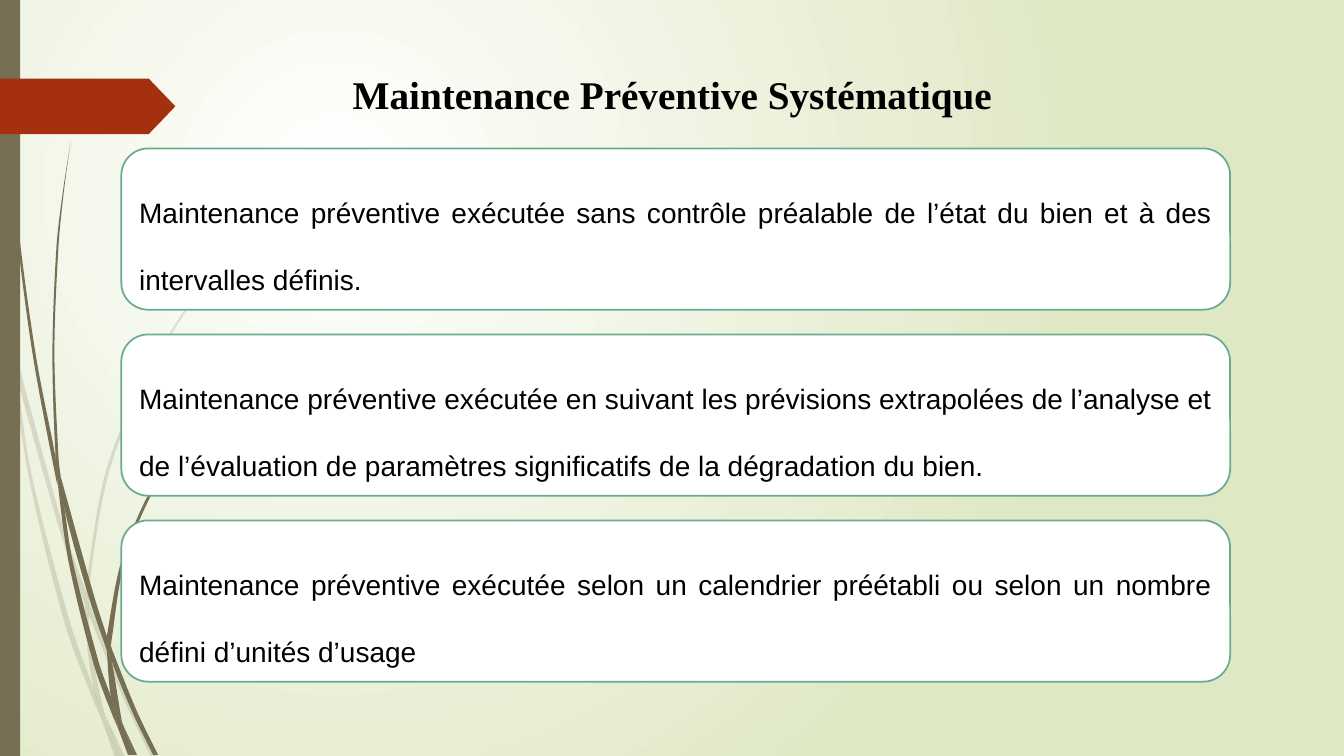
from dataclasses import dataclass

from lxml import etree
from pptx import Presentation
from pptx import util as u
from pptx.dml.color import RGBColor
from pptx.enum import shapes, text
from pptx.oxml import ns
from pptx.shapes.autoshape import Shape
from pptx.slide import Slide
from pptx.text.text import TextFrame

Point = tuple[float, float]

SLIDE_WIDTH = u.Inches(13.333)
SLIDE_HEIGHT = u.Inches(7.5)
GRID_ROWS = 75
CELL = SLIDE_HEIGHT / GRID_ROWS


@dataclass(frozen=True)
class Theme:
    glow: str = "FFFFFF"
    edge: str = "DFE8C4"
    olive: str = "766F54"
    rust: str = "A53010"
    card: str = "FFFFFF"
    card_line: str = "6AAC91"
    ink: str = "000000"
    title_font: str = "Times New Roman"
    body_font: str = "Arial"
    title_size: int = 28
    body_size: int = 20
    line_width: float = 1.25
    faint_percent: int = 20


@dataclass(frozen=True)
class Area:
    column: float
    row: float
    columns: float
    rows: float

    def lengths(self) -> tuple[int, int, int, int]:
        return (cells(self.column), cells(self.row),
                cells(self.columns), cells(self.rows))


@dataclass(frozen=True)
class Blade:
    left: list[Point]
    right: list[Point]


THEME = Theme()

FAINT_BLADES = [
    Blade([(0, 29.9), (1, 34.4), (1.1, 35)], [(0, 28.2), (0.9, 32.2), (1.1, 35)]),
    Blade([(1.7, 37.6), (5.8, 52.2), (8.4, 59.9)], [(1.4, 34.5), (6.2, 52), (8.5, 58.6)]),
    Blade([(8.8, 61), (12.3, 69.4), (15, 75.1)], [(8.8, 59.6), (9.2, 60.7), (12.7, 69.2), (15.5, 75.1)]),
    Blade([(10.5, 71.1), (11.9, 75.1)], [(10.5, 71.1), (12.4, 75.1)]),
    Blade([(1.1, 35), (2.8, 47), (6.5, 62.1), (9.2, 69.3), (10.1, 71.4)],
          [(1.1, 35), (1.7, 37.6), (3.1, 46.9), (7, 61.9), (9.3, 68.3), (9.9, 70.7), (10.1, 71.4)]),
    Blade([(8.4, 59.9), (8.7, 64.6), (9.3, 68.3), (9.6, 69.2), (10.5, 71.1)],
          [(8.4, 59.9), (8.8, 60.8), (8.8, 61), (9.1, 64.6), (10.3, 70.6), (10.5, 71.1)]),
    Blade([(31.2, 15.3), (28.9, 17.5), (26.8, 19.7), (22.8, 24.4), (15.8, 34.8), (10.7, 46.1),
           (8.5, 58.4), (8.5, 58.6)],
          [(31.2, 15.4), (29, 17.5), (26.8, 19.8), (22.9, 24.5), (16, 34.9), (11, 46.2),
           (8.8, 58.4), (8.8, 59.6)]),
    Blade([(10.1, 71.4), (11.4, 75.1)], [(10.1, 71.4), (11.9, 75.1)]),
    Blade([(8.5, 58.6), (8.4, 59.9), (8.8, 60.8)], [(8.5, 58.6), (8.8, 59.6), (8.8, 61)]),
    Blade([(9.3, 68.3), (9.9, 70.7), (10.1, 71.4), (11.9, 75.1)],
          [(9.3, 68.3), (9.6, 69.2), (10.5, 71.1), (11.9, 75.1)]),
]

SOLID_BLADES = [
    Blade([(0.3, 0), (0.4, 4.8), (0.7, 11), (1.7, 23.3), (3.3, 35.5), (5.6, 47.7), (5.7, 48.1)],
          [(0.4, 0), (0.5, 4.8), (0.8, 10.9), (1.9, 23.2), (3.6, 35.5), (5.5, 45.3), (5.7, 48.1)]),
    Blade([(6, 47.2), (6.4, 50.5), (8.8, 59.2), (10.6, 64.5)], [(6, 47.2), (9.3, 59), (10.6, 63.1)]),
    Blade([(11, 64.1), (11.1, 65.6), (13.2, 70.8), (15.2, 74.9)],
          [(11, 64.1), (11.3, 64.9), (13.6, 70.6), (15.7, 74.9)]),
    Blade([(5.7, 47.7), (6.8, 55.7), (9.3, 65.9), (11.1, 70.8), (11.7, 72.2)],
          [(5.7, 47.7), (6.4, 50.5), (7.2, 55.6), (9.8, 65.7), (11, 69.1), (11.6, 71.7), (11.7, 72.2)]),
    Blade([(7, 14.1), (6.2, 19.3), (5.6, 24.5), (5.2, 34.9), (5.5, 44.9), (6, 47.2)],
          [(7, 14.1), (6.3, 19.3), (5.8, 24.5), (5.4, 34.9), (5.8, 45.3), (6, 47.2)]),
    Blade([(12.2, 71.9), (13.3, 74.9)], [(12.2, 71.9), (13.6, 74.9)]),
    Blade([(5.5, 44.9), (5.5, 45.3), (5.7, 47.7), (6.4, 50.5)], [(5.5, 44.9), (6, 47.2), (6.4, 50.5)]),
    Blade([(26, 34.4), (24.5, 35.8), (23.1, 37.3), (20.4, 40.5), (15.6, 47.4), (12.2, 55.1), (10.6, 63.1)],
          [(26.1, 34.4), (24.5, 35.9), (23.1, 37.4), (20.5, 40.6), (15.8, 47.6), (12.5, 55.2),
           (11.1, 63.3), (11, 64.1)]),
    Blade([(11.7, 72.2), (12.7, 74.9)], [(11.7, 72.2), (13.1, 74.9)]),
    Blade([(10.6, 64.5), (11, 69.1), (11.6, 70.6), (12.2, 71.9)],
          [(10.6, 64.5), (10.9, 65.1), (11.1, 65.6), (12.1, 71.6), (12.2, 71.9)]),
    Blade([(10.6, 63.1), (10.6, 64.5), (10.9, 65.1), (11.1, 65.6)],
          [(10.6, 63.1), (11, 64.1), (11.1, 65.6)]),
    Blade([(11, 69.1), (11.6, 71.7), (11.7, 72.2), (13, 74.9)],
          [(11, 69.1), (11.6, 70.6), (12.2, 71.9), (13.3, 74.9)]),
]

TITLE = "Maintenance Préventive Systématique"
TITLE_AREA = Area(34, 6.5, 66.1, 5.7)
EDGE_BAR = Area(0, 0, 2, GRID_ROWS)
ARROW_TAG = Area(0, 7.8, 17.4, 5.5)
FIRST_CARD = Area(12.04, 14.73, 110, 16)
CARD_PITCH = 18.45
DEFINITIONS = [
    "Maintenance préventive exécutée sans contrôle préalable de l’état du bien "
    "et à des intervalles définis.",
    "Maintenance préventive exécutée en suivant les prévisions extrapolées de l’analyse "
    "et de l’évaluation de paramètres significatifs de la dégradation du bien.",
    "Maintenance préventive exécutée selon un calendrier préétabli "
    "ou selon un nombre défini d’unités d’usage",
]


def cells(count: float) -> int:
    return round(count * CELL)


def curve_points(points: list[Point]) -> list[Point]:
    padded = [points[0], *points, points[-1]]
    curve = []
    for a, b, c, d in zip(padded, padded[1:], padded[2:], padded[3:]):
        reach = min(abs(c[1] - b[1]) / max(abs(q[1] - p[1]), 0.1) for p, q in ((a, c), (b, d))) / 3
        curve += [(b[0] + (c[0] - a[0]) * reach, b[1] + (c[1] - a[1]) * reach),
                  (c[0] - (d[0] - b[0]) * reach, c[1] - (d[1] - b[1]) * reach), c]
    return curve


def draw_background(slide: Slide) -> None:
    fill = slide.background.fill
    fill.gradient()
    for stop, colour, position in zip(fill.gradient_stops, (THEME.glow, THEME.edge), (0, 1)):
        stop.color.rgb = RGBColor.from_string(colour)
        stop.position = position
    gradient = slide.element.find(".//" + ns.qn("a:gradFill"))
    radial = etree.Element(ns.qn("a:path"), path="circle")
    etree.SubElement(radial, ns.qn("a:fillToRect"), l="50000", t="50000", r="100000", b="100000")
    gradient.replace(gradient.find(ns.qn("a:lin")), radial)


def paint(shape: Shape, colour: str) -> None:
    shape.shadow.inherit = False
    shape.fill.solid()
    shape.fill.fore_color.rgb = RGBColor.from_string(colour)
    shape.line.fill.background()


def bend(lines: list[etree.ElementBase]) -> None:
    for first, second, third in zip(lines[::3], lines[1::3], lines[2::3]):
        curve = etree.Element(ns.qn("a:cubicBezTo"))
        first.addprevious(curve)
        for line in (first, second, third):
            curve.append(line[0])
            line.getparent().remove(line)


def draw_blade(slide: Slide, blade: Blade, faint: bool) -> None:
    down, back = curve_points(blade.left), curve_points(blade.right[::-1])
    start, *rest = [(cells(x), cells(y)) for x, y in [blade.left[0], *down, blade.right[-1], *back]]
    builder = slide.shapes.build_freeform(*start)
    builder.add_line_segments(rest, close=True)
    shape = builder.convert_to_shape()
    paint(shape, THEME.olive)
    lines = shape.element.findall(".//" + ns.qn("a:lnTo"))
    bend(lines[:len(down)])
    bend(lines[len(down) + 1:])
    if faint:
        colour = shape.element.spPr.find(".//" + ns.qn("a:srgbClr"))
        etree.SubElement(colour, ns.qn("a:alpha"), val=str(THEME.faint_percent * 1000))


def draw_shape(slide: Slide, kind: shapes.MSO_SHAPE, area: Area, colour: str) -> Shape:
    shape = slide.shapes.add_shape(kind, *area.lengths())
    paint(shape, colour)
    return shape


def write(frame: TextFrame, words: str, font: str, size: int, bold: bool = False) -> None:
    run = frame.paragraphs[0].add_run()
    run.text = words
    run.font.name, run.font.size, run.font.bold = font, u.Pt(size), bold
    run.font.color.rgb = RGBColor.from_string(THEME.ink)
    frame.auto_size = text.MSO_AUTO_SIZE.SHAPE_TO_FIT_TEXT


def draw_card(slide: Slide, index: int, words: str) -> None:
    area = Area(FIRST_CARD.column, FIRST_CARD.row + index * CARD_PITCH, FIRST_CARD.columns, FIRST_CARD.rows)
    card = draw_shape(slide, shapes.MSO_SHAPE.ROUNDED_RECTANGLE, area, THEME.card)
    card.line.color.rgb = RGBColor.from_string(THEME.card_line)
    card.line.width = u.Pt(THEME.line_width)
    frame = card.text_frame
    frame.word_wrap = True
    frame.vertical_anchor = text.MSO_ANCHOR.MIDDLE
    frame.paragraphs[0].alignment = text.PP_ALIGN.JUSTIFY
    frame.paragraphs[0].line_spacing = 2.0
    write(frame, words, THEME.body_font, THEME.body_size)


def main() -> None:
    presentation = Presentation()
    presentation.slide_width, presentation.slide_height = SLIDE_WIDTH, SLIDE_HEIGHT
    slide = presentation.slides.add_slide(presentation.slide_layouts[6])
    draw_background(slide)
    for blades, faint in ((FAINT_BLADES, True), (SOLID_BLADES, False)):
        for blade in blades:
            draw_blade(slide, blade, faint)
    draw_shape(slide, shapes.MSO_SHAPE.RECTANGLE, EDGE_BAR, THEME.olive)
    tag = draw_shape(slide, shapes.MSO_SHAPE.PENTAGON, ARROW_TAG, THEME.rust)
    tag.adjustments[0] = 0.48
    title = slide.shapes.add_textbox(*TITLE_AREA.lengths()).text_frame
    title.word_wrap = False
    write(title, TITLE, THEME.title_font, THEME.title_size, bold=True)
    for index, words in enumerate(DEFINITIONS):
        draw_card(slide, index, words)
    presentation.save("out.pptx")


if __name__ == "__main__":
    main()
